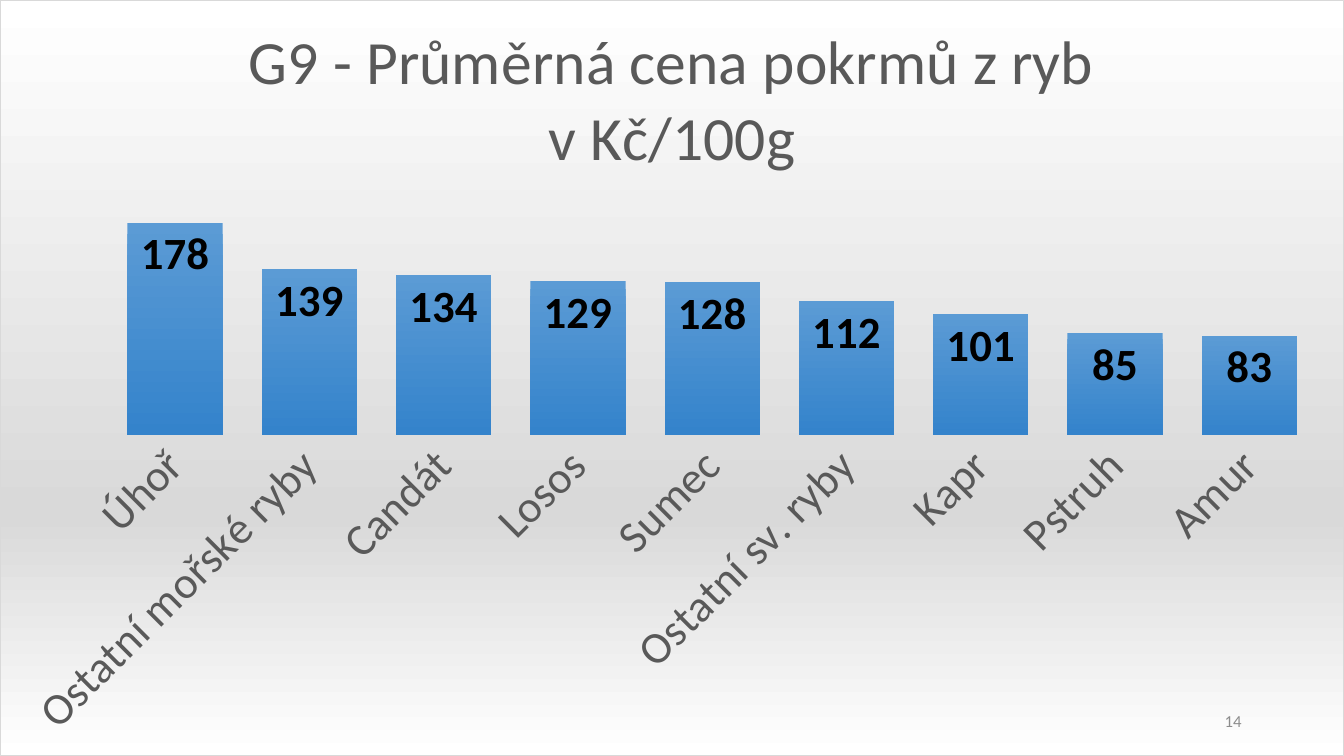
from typing import Any, NamedTuple

from lxml import etree
from pptx import Presentation
from pptx import util as u
from pptx.chart import data as chart_data
from pptx.chart.chart import Chart
from pptx.dml.color import RGBColor
from pptx.enum import chart as ch
from pptx.enum import text
from pptx.oxml import parse_xml
from pptx.oxml.ns import nsdecls, qn

FONT = "Calibri"
COLOURS = {
    "white": "FFFFFF",
    "silver": "D9D9D9",
    "bar_top": "5B9BD5",
    "bar_bottom": "3483CB",
    "label": "000000",
    "axis": "595959",
    "page": "8C8C8C",
}
SLIDE_WIDTH, SLIDE_HEIGHT = u.Pt(960), u.Pt(540)


class Dish(NamedTuple):
    fish: str
    price: int


DISHES = [
    Dish("Úhoř", 178),
    Dish("Ostatní mořské ryby", 139),
    Dish("Candát", 134),
    Dish("Losos", 129),
    Dish("Sumec", 128),
    Dish("Ostatní sv. ryby", 112),
    Dish("Kapr", 101),
    Dish("Pstruh", 85),
    Dish("Amur", 83),
]


def rgb(name: str) -> RGBColor:
    return RGBColor.from_string(COLOURS[name])


def apply(target: Any, values: dict[str, Any]) -> None:
    for attribute, value in values.items():
        setattr(target, attribute, value)


def style_font(font: Any, size: float, colour: str, bold: bool = False) -> None:
    apply(font, {"name": FONT, "size": u.Pt(size), "bold": bold})
    font.color.rgb = rgb(colour)


def paint_background(chart: Chart) -> None:
    """Give the chart area its three-stop vertical gradient and thin border."""
    stops = "".join(
        f'<a:gs pos="{percent * 1000}"><a:srgbClr val="{COLOURS[name]}"/></a:gs>'
        for percent, name in ((0, "white"), (68, "silver"), (100, "white"))
    )
    area = parse_xml(
        f'<c:spPr {nsdecls("c", "a")}>'
        f'<a:gradFill><a:gsLst>{stops}</a:gsLst><a:lin ang="5400000" scaled="0"/></a:gradFill>'
        f'<a:ln w="{u.Pt(0.75)}"><a:solidFill><a:srgbClr val="{COLOURS["silver"]}"/>'
        "</a:solidFill></a:ln></c:spPr>"
    )
    chart.element.find(qn("c:chart")).addnext(area)


def place_plot(chart: Chart, x: float, y: float, w: float, h: float) -> None:
    """Fix the inner plot area, in fractions of the chart."""
    plot_area = chart.element.find(".//" + qn("c:plotArea"))
    for old in plot_area.findall(qn("c:layout")):
        plot_area.remove(old)
    layout = parse_xml(f'<c:layout {nsdecls("c")}/>')
    manual = etree.SubElement(layout, qn("c:manualLayout"))
    settings = {"layoutTarget": "inner", "xMode": "edge", "yMode": "edge",
                "x": x, "y": y, "w": w, "h": h}
    for tag, value in settings.items():
        etree.SubElement(manual, qn(f"c:{tag}")).set("val", str(value))
    plot_area.insert(0, layout)


def style_axes(chart: Chart) -> None:
    fish_axis, price_axis = chart.category_axis, chart.value_axis
    for axis in (fish_axis, price_axis):
        apply(axis, {
            "has_major_gridlines": False,
            "major_tick_mark": ch.XL_TICK_MARK.NONE,
            "minor_tick_mark": ch.XL_TICK_MARK.NONE,
        })
    apply(price_axis, {"visible": False, "minimum_scale": 0, "maximum_scale": 200})
    fish_axis.format.line.fill.background()
    style_font(fish_axis.tick_labels.font, 32, "axis")
    slant = fish_axis._element.find(".//" + qn("a:bodyPr"))
    slant.set("rot", "-2700000")
    slant.set("vert", "horz")


def style_bars(chart: Chart) -> None:
    plot = chart.plots[0]
    apply(plot, {"gap_width": 41, "vary_by_categories": False, "has_data_labels": True})
    apply(plot.data_labels, {
        "show_value": True,
        "position": ch.XL_LABEL_POSITION.INSIDE_END,
    })
    style_font(plot.data_labels.font, 32, "label", bold=True)
    bars = plot.series[0].format
    bars.line.fill.background()
    bars.fill.gradient()
    bars.fill.gradient_angle = 270
    for stop, name in zip(bars.fill.gradient_stops, ("bar_top", "bar_bottom")):
        stop.color.rgb = rgb(name)


def add_price_chart(slide: Any) -> None:
    prices = chart_data.CategoryChartData()
    prices.categories = [dish.fish for dish in DISHES]
    prices.add_series("Series 1", [dish.price for dish in DISHES])
    chart = slide.shapes.add_chart(
        ch.XL_CHART_TYPE.COLUMN_CLUSTERED, 0, 0, SLIDE_WIDTH, SLIDE_HEIGHT, prices
    ).chart
    apply(chart, {"has_legend": False, "has_title": True})
    style_font(chart.font, 10, "label")
    heading = chart.chart_title.text_frame
    heading.text = "G9 - Průměrná cena pokrmů z ryb\nv Kč/100g"
    for line in heading.paragraphs:
        style_font(line.runs[0].font, 44, "axis")
    chart.chart_title.include_in_layout = False
    style_axes(chart)
    style_bars(chart)
    place_plot(chart, 0.08, 0.26, 0.9, 0.315)
    paint_background(chart)


def add_page_number(slide: Any, number: str) -> None:
    frame = slide.shapes.add_textbox(
        u.Pt(678), u.Pt(500.5), u.Pt(216), u.Pt(28.75)
    ).text_frame
    apply(frame, {"word_wrap": True, "vertical_anchor": text.MSO_ANCHOR.MIDDLE})
    page = frame.paragraphs[0]
    page.alignment = text.PP_ALIGN.RIGHT
    run = page.add_run()
    run.text = number
    style_font(run.font, 12, "page")


def main() -> None:
    deck = Presentation()
    apply(deck, {"slide_width": SLIDE_WIDTH, "slide_height": SLIDE_HEIGHT})
    slide = deck.slides.add_slide(deck.slide_layouts[6])
    add_price_chart(slide)
    add_page_number(slide, "14")
    deck.save("out.pptx")


if __name__ == "__main__":
    main()
